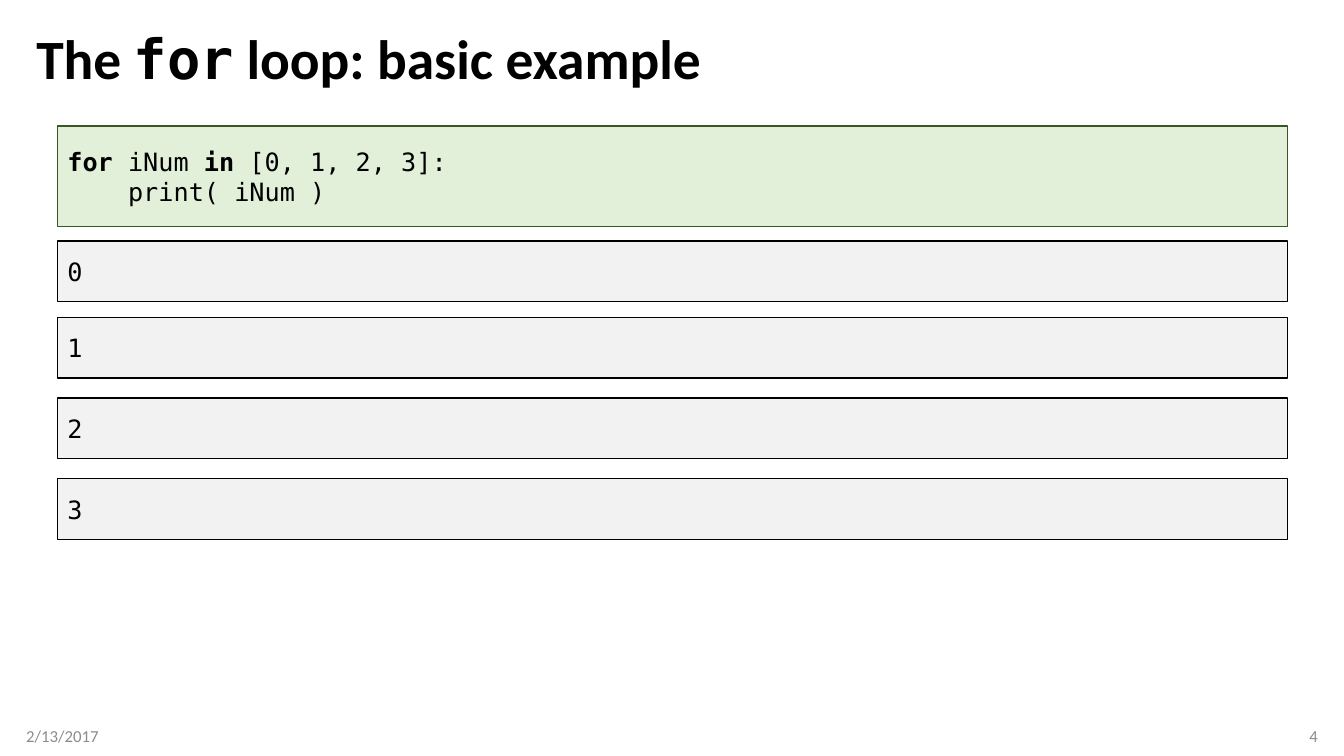
from dataclasses import dataclass

from pptx import Presentation
from pptx.dml.color import RGBColor
from pptx.enum.shapes import MSO_SHAPE
from pptx.enum.text import MSO_ANCHOR, MSO_AUTO_SIZE, PP_ALIGN
from pptx.util import Inches, Pt

RECTANGLE = MSO_SHAPE.RECTANGLE
MIDDLE = MSO_ANCHOR.MIDDLE
NO_AUTOFIT = MSO_AUTO_SIZE.NONE
LEFT, RIGHT = PP_ALIGN.LEFT, PP_ALIGN.RIGHT


@dataclass(frozen=True)
class Theme:
    body_font: str = "Calibri"
    code_font: str = "DejaVu Sans Mono"
    title_size: float = 39.6
    code_size: float = 18
    footer_size: float = 12
    text: str = "000000"
    footer: str = "8C8C8C"
    code_fill: str = "E2F0D9"
    code_line: str = "385723"
    output_fill: str = "F2F2F2"
    output_line: str = "000000"


@dataclass(frozen=True)
class Span:
    text: str
    bold: bool = False


@dataclass(frozen=True)
class Panel:
    top: float
    height: float
    fill: str
    line: str
    lines: list[list[Span]]


@dataclass(frozen=True)
class Footer:
    text: str
    left: float
    align: PP_ALIGN
    left_inset: float
    right_inset: float


THEME = Theme()
MARGIN = 0.26
PANEL_LEFT, PANEL_WIDTH = 0.57, 12.2
OUTPUT_HEIGHT = 0.6
OUTPUT_TOPS = [2.39, 3.15, 3.95, 4.75]

CODE = [
    [Span("for ", True), Span("iNum "), Span("in", True), Span(" [0, 1, 2, 3]:")],
    [Span("    print( iNum )")],
]
PANELS = [Panel(1.25, 1, THEME.code_fill, THEME.code_line, CODE)] + [
    Panel(top, OUTPUT_HEIGHT, THEME.output_fill, THEME.output_line, [[Span(str(number))]])
    for number, top in enumerate(OUTPUT_TOPS)
]
FOOTERS = [
    Footer("2/13/2017", MARGIN, LEFT, 0, 0.1),
    Footer("4", 10.07, RIGHT, 0.1, 0),
]


def style_font(font, name: str, size: float, color: str) -> None:
    font.name = name
    font.size = Pt(size)
    font.color.rgb = RGBColor.from_string(color)


def fill_title(title) -> None:
    title.left, title.top = Inches(MARGIN), Inches(0.25)
    title.width, title.height = Inches(12.81), Inches(0.72)
    frame = title.text_frame
    frame.auto_size = NO_AUTOFIT
    frame.vertical_anchor = MIDDLE
    para = frame.paragraphs[0]
    para.alignment = LEFT
    para.line_spacing = 0.9
    style_font(para.font, THEME.body_font, THEME.title_size, THEME.text)
    para.font.bold = True
    for text, font_name in [
        ("The ", THEME.body_font),
        ("for", THEME.code_font),
        (" loop: basic example", THEME.body_font),
    ]:
        span = para.add_run()
        span.text = text
        style_font(span.font, font_name, THEME.title_size, THEME.text)
        span.font.bold = True


def add_panel(slide, panel: Panel) -> None:
    box = slide.shapes.add_shape(
        RECTANGLE, Inches(PANEL_LEFT), Inches(panel.top),
        Inches(PANEL_WIDTH), Inches(panel.height),
    )
    box.shadow.inherit = False
    box.fill.solid()
    box.fill.fore_color.rgb = RGBColor.from_string(panel.fill)
    box.line.color.rgb = RGBColor.from_string(panel.line)
    box.line.width = Pt(1)
    frame = box.text_frame
    frame.vertical_anchor = MIDDLE
    for index, line in enumerate(panel.lines):
        para = frame.add_paragraph() if index else frame.paragraphs[0]
        para.alignment = LEFT
        style_font(para.font, THEME.code_font, THEME.code_size, THEME.text)
        for part in line:
            span = para.add_run()
            span.text = part.text
            style_font(span.font, THEME.code_font, THEME.code_size, THEME.text)
            span.font.bold = part.bold


def add_footer(slide, footer: Footer) -> None:
    box = slide.shapes.add_textbox(
        Inches(footer.left), Inches(7.1), Inches(3), Inches(0.4)
    )
    frame = box.text_frame
    frame.word_wrap = True
    frame.vertical_anchor = MIDDLE
    frame.margin_left = Inches(footer.left_inset)
    frame.margin_right = Inches(footer.right_inset)
    para = frame.paragraphs[0]
    para.text = footer.text
    para.alignment = footer.align
    style_font(para.font, THEME.body_font, THEME.footer_size, THEME.footer)


def main() -> None:
    deck = Presentation()
    deck.slide_width, deck.slide_height = Inches(13.33), Inches(7.5)
    title_only = deck.slide_layouts.get_by_name("Title Only")
    slide = deck.slides.add_slide(title_only)
    fill_title(slide.shapes.title)
    for footer in FOOTERS:
        add_footer(slide, footer)
    for panel in PANELS:
        add_panel(slide, panel)
    deck.save("out.pptx")


if __name__ == "__main__":
    main()
